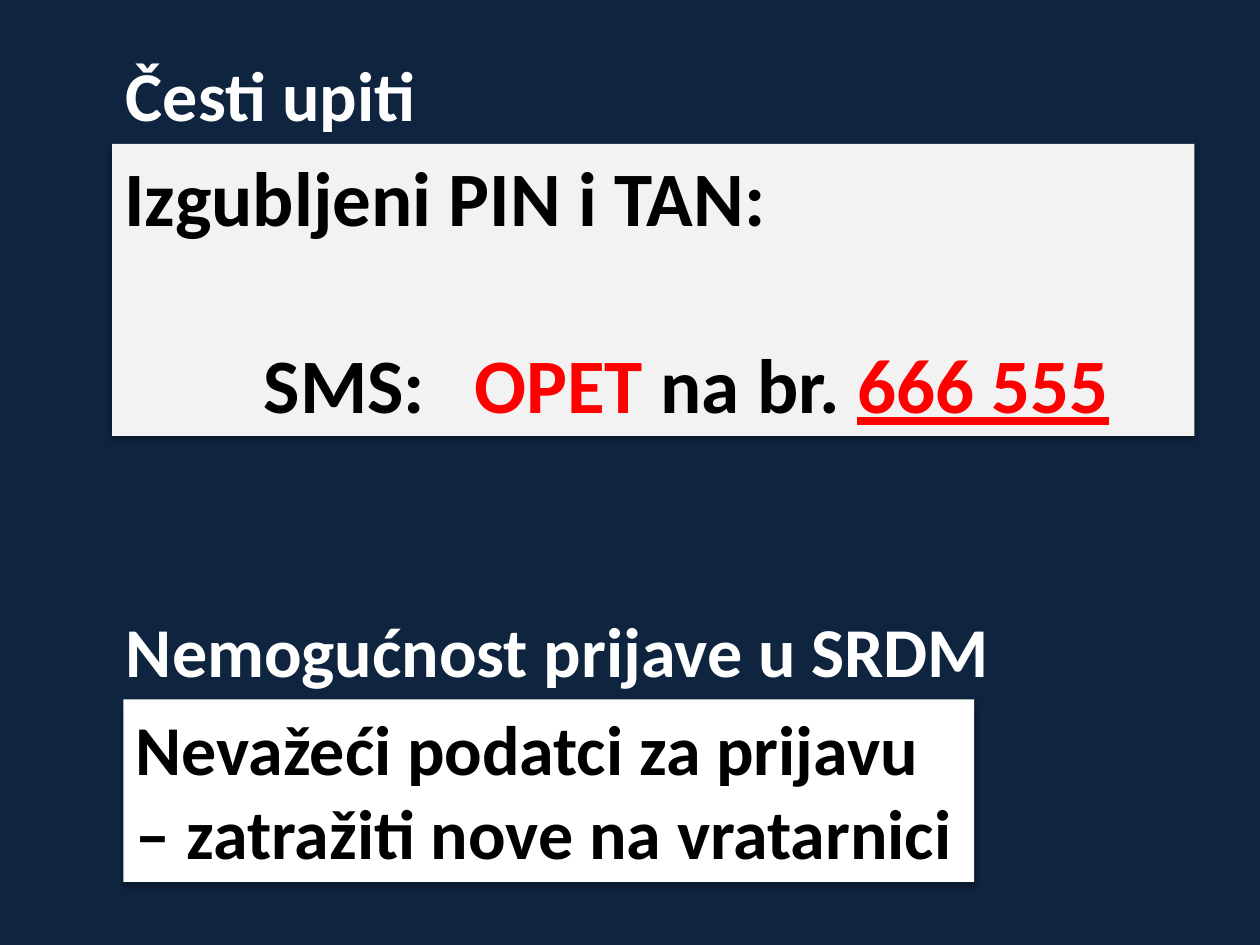
"""Build the slide on frequent questions about lost codes and failed sign-in."""
from lxml.etree import SubElement
from pptx import Presentation
from pptx.dml.color import RGBColor
from pptx.enum.shapes import MSO_SHAPE
from pptx.enum.text import MSO_ANCHOR, MSO_AUTO_SIZE, PP_ALIGN
from pptx.oxml.ns import qn
from pptx.util import Cm, Pt


def color(value):
    """Turn a hex string into a colour."""
    return RGBColor.from_string(value)


def add_shadow(shape):
    """Give a shape a soft shadow that falls straight down."""
    effects = SubElement(shape.element.spPr, qn("a:effectLst"))
    shadow = SubElement(effects, qn("a:outerShdw"), blurRad=str(Pt(3.5)), dist=str(Pt(2.2)),
                        dir="5400000", rotWithShape="0")
    tint = SubElement(shadow, qn("a:srgbClr"), val="000000")
    SubElement(tint, qn("a:alpha"), val="32000")


WHITE, BLACK, RED = "FFFFFF", "000000", "FF0000"
SMS_TABS = (Cm(2.81), Cm(7.05))

deck = Presentation()
deck.slide_width, deck.slide_height = Cm(25.4), Cm(19.05)
page = deck.slides.add_slide(deck.slide_layouts[6])
page.background.fill.solid()
page.background.fill.fore_color.rgb = color("0F243E")

boxes = [
    ((2.26, 2.9, 21.82, 5.89), "F2F2F2", 44, True, [
        [("Izgubljeni PIN i TAN:", BLACK, False)],
        [("\tSMS:\t", BLACK, False), ("OPET", RED, False),
         (" na br. ", BLACK, False), ("666 555", RED, True)],
    ]),
    ((2.29, 0.91, 6.43, 1.96), None, 40, False, [[("Česti upiti", WHITE, False)]]),
    ((2.29, 12.12, 18.11, 1.96), None, 40, False,
     [[("Nemogućnost prijave u SRDM", WHITE, False)]]),
    ((2.49, 14.1, 17.15, 3.68), WHITE, 40, False, [
        [("Nevažeći podatci za prijavu", BLACK, False)],
        [("– zatražiti nove na vratarnici", BLACK, False)],
    ]),
]

for place, fill, size, wrap, lines in boxes:
    place = [Cm(length) for length in place]
    if fill:
        box = page.shapes.add_shape(MSO_SHAPE.RECTANGLE, *place)
        box.fill.solid()
        box.fill.fore_color.rgb = color(fill)
        box.line.fill.background()
        add_shadow(box)
    else:
        box = page.shapes.add_textbox(*place)
    frame = box.text_frame
    frame.word_wrap = wrap
    frame.auto_size = MSO_AUTO_SIZE.SHAPE_TO_FIT_TEXT
    frame.vertical_anchor = MSO_ANCHOR.TOP
    for number, line in enumerate(lines):
        para = frame.add_paragraph() if number else frame.paragraphs[0]
        para.alignment = PP_ALIGN.LEFT
        if line[0][0].startswith("\t"):
            para.space_before = Pt(53.7)
            tabs = SubElement(para._p.get_or_add_pPr(), qn("a:tabLst"))
            for stop in SMS_TABS:
                SubElement(tabs, qn("a:tab"), pos=str(stop), algn="l")
        for text, ink, underline in line:
            span = para.add_run()
            span.text = text
            span.font.name = "Calibri"
            span.font.size = Pt(size)
            span.font.bold = True
            span.font.color.rgb = color(ink)
            if underline:
                span.font.underline = True

deck.save("out.pptx")
